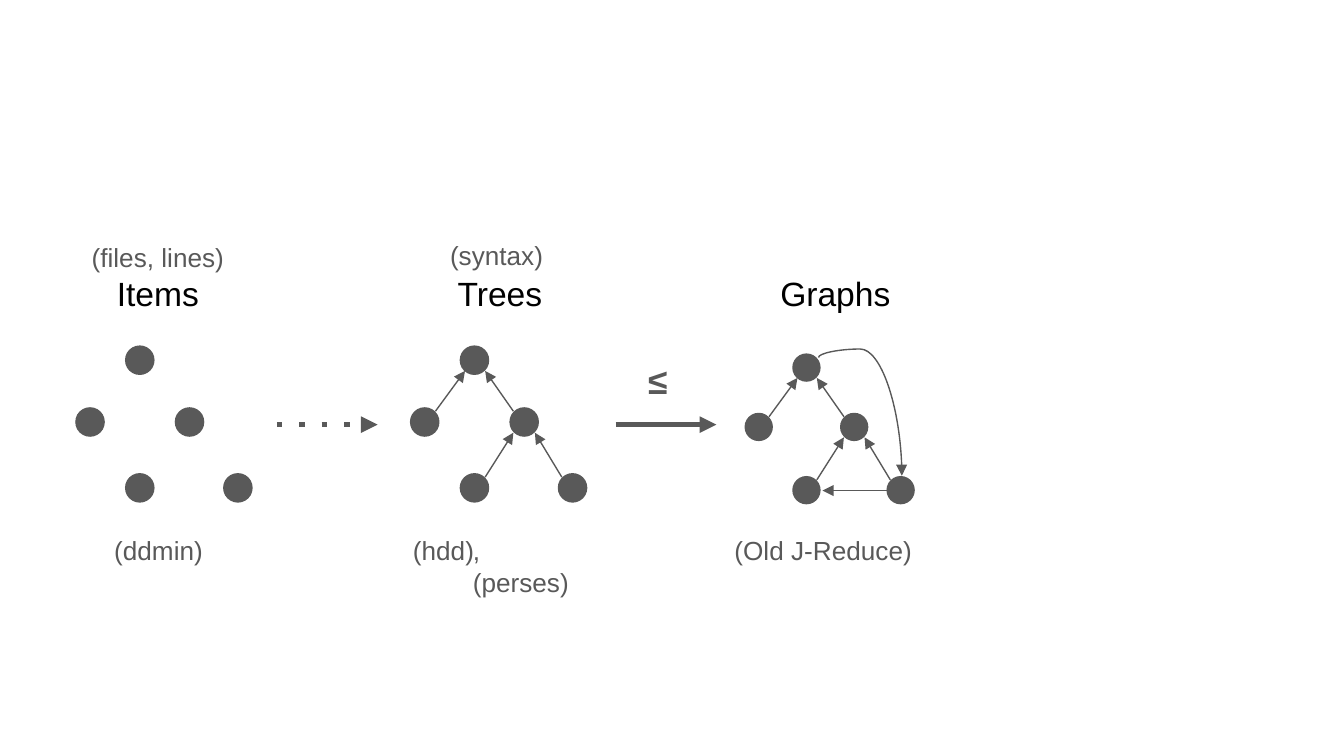
"""Build a slide that compares items, trees and graphs as reduction models."""
from lxml import etree
from pptx import Presentation
from pptx.dml.color import RGBColor
from pptx.enum.shapes import MSO_CONNECTOR, MSO_SHAPE
from pptx.enum.text import MSO_ANCHOR, PP_ALIGN
from pptx.oxml.ns import qn
from pptx.util import Inches, Pt

LINE, CURVE = MSO_CONNECTOR.STRAIGHT, MSO_CONNECTOR.CURVE
DOT = MSO_SHAPE.OVAL
LEFT, MID = PP_ALIGN.LEFT, PP_ALIGN.CENTER
TOP, CENTRE, LOW = MSO_ANCHOR.TOP, MSO_ANCHOR.MIDDLE, MSO_ANCHOR.BOTTOM

THEME = {
    "font": "Arial",
    "grey": RGBColor(0x59, 0x59, 0x59),
    "black": RGBColor(0, 0, 0),
    "note": 14, "head": 18, "sign": 19,
    "thin": 0.75, "thick": 3,
}

deck = Presentation()
deck.slide_width = Inches(10)
deck.slide_height = deck.slide_width * 9 // 16
slide = deck.slides.add_slide(deck.slide_layouts[6])
shapes = slide.shapes


def text(box, *lines, align=MID, anchor=TOP, size="note", color="grey", bold=False):
    frame = shapes.add_textbox(*map(Inches, box)).text_frame
    frame.word_wrap = True
    frame.vertical_anchor = anchor
    frame.margin_left = frame.margin_right = Inches(0.1)
    frame.margin_top = frame.margin_bottom = Inches(0.1)
    para = frame.paragraphs[0]
    para.alignment = align
    for i, words in enumerate(lines):
        if i:
            para.add_line_break()
        run = para.add_run()
        run.text = words
        font = run.font
        font.name, font.bold = THEME["font"], bold
        font.size, font.color.rgb = Pt(THEME[size]), THEME[color]
    return para


def arrow(start, end, width="thin", dash=None, kind=LINE):
    link = shapes.add_connector(kind, *map(Inches, (*start, *end)))
    link.line.color.rgb = THEME["grey"]
    link.line.width = Pt(THEME[width])
    stroke = link.line._get_or_add_ln()
    if dash:
        etree.SubElement(stroke, qn("a:prstDash"), val=dash)
    etree.SubElement(stroke, qn("a:tailEnd"), type="triangle")
    etree.SubElement(link._element.spPr, qn("a:effectLst"))
    return link


nodes = [(0.37, 0), (0, 0.46), (0.74, 0.46), (0.37, 0.95), (1.1, 0.95)]
edges = [
    ((0.19, 0.49), (0.41, 0.19)),
    ((0.77, 0.49), (0.56, 0.19)),
    ((0.56, 0.98), (0.77, 0.65)),
    ((1.13, 0.98), (0.93, 0.65)),
]
models = [
    (0.56, 2.57, 1, []),
    (3.05, 2.57, 1, edges),
    (5.54, 2.63, 0.96, edges),
]
for left, top, scale, links in models:
    side = Inches(0.22 * scale)
    for x, y in nodes:
        node = shapes.add_shape(
            DOT, Inches(left + x * scale), Inches(top + y * scale), side, side)
        node.shadow.inherit = False
        node.fill.solid()
        node.fill.fore_color.rgb = THEME["grey"]
        node.line.fill.background()
    for ends in links:
        arrow(*[(left + x * scale, top + y * scale) for x, y in ends])

arrow((6.6, 3.65), (6.12, 3.65))
loop = arrow((6.84, 2.79), (5.96, 3.41), kind=CURVE)
loop.rotation = 270
props = loop._element.spPr
props.find(qn("a:xfrm")).set("rot", str(270 * 60000))
guides = props.find(qn("a:prstGeom")).find(qn("a:avLst"))
etree.SubElement(guides, qn("a:gd"), name="adj1", fmla="val -7200")

arrow((2.06, 3.16), (2.81, 3.16), width="thick", dash="dot")
arrow((4.58, 3.16), (5.33, 3.16), width="thick")
text((4.54, 2.57, 0.71, 0.5), "≤", size="sign", bold=True)

items = text((0.38, 1.93, 1.59, 0.5), "(files, lines)", "Items", anchor=LOW)
name = items.runs[1].font
name.size, name.color.rgb = Pt(THEME["head"]), THEME["black"]
for left, width, word in [(2.86, 1.72, "Trees"), (5.42, 1.59, "Graphs")]:
    text((left, 1.93, width, 0.5), word, anchor=LOW, size="head", color="black")
text((3, 1.73, 1.39, 0.33), "(syntax)", anchor=CENTRE)

tools = [
    (0.7, 0.96, "(ddmin)", MID),
    (2.97, 0.66, "(hdd)", MID),
    (3.42, 1, ", (perses)", LEFT),
    (5.33, 1.59, "(Old J-Reduce)", MID),
]
for left, width, word, align in tools:
    text((left, 3.88, width, 0.43), word, align=align)

deck.save("out.pptx")
